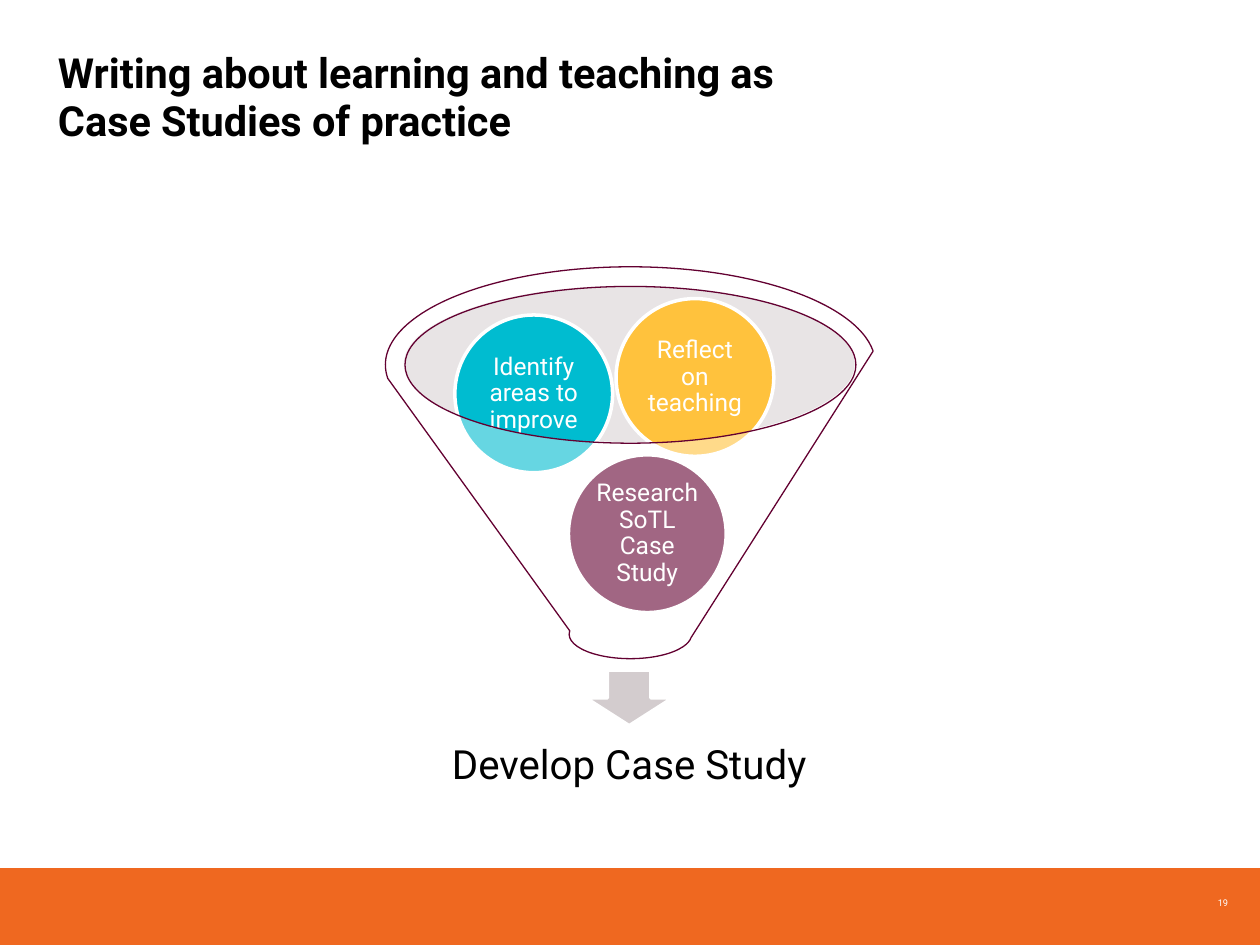
from lxml import etree
from pptx import Presentation
from pptx.dml.color import RGBColor
from pptx.enum.shapes import MSO_SHAPE
from pptx.enum.text import MSO_ANCHOR, PP_ALIGN
from pptx.oxml.ns import qn
from pptx.util import Cm, Pt

RECTANGLE, OVAL = MSO_SHAPE.RECTANGLE, MSO_SHAPE.OVAL
DOWN_ARROW, FUNNEL = MSO_SHAPE.DOWN_ARROW, MSO_SHAPE.FUNNEL
LEFT, CENTER = PP_ALIGN.LEFT, PP_ALIGN.CENTER
TOP, MIDDLE = MSO_ANCHOR.TOP, MSO_ANCHOR.MIDDLE
FONT = "Roboto"
WHITE, BLACK, PLUM = "FFFFFF", "000000", "630031"


def set_color(color_format, value):
    color_format.rgb = RGBColor.from_string(value)


def add_shape(page, kind, box, fill, line=None, width=0, opacity=None):
    shape = page.shapes.add_shape(kind, *map(Cm, box))
    shape.shadow.inherit = False
    shape.fill.solid()
    set_color(shape.fill.fore_color, fill)
    if opacity is not None:
        color = shape.fill._xPr.find(qn("a:solidFill"))[0]
        etree.SubElement(color, qn("a:alpha"), val=str(opacity * 1000))
    if line:
        set_color(shape.line.color, line)
        shape.line.width = Pt(width)
    else:
        shape.line.fill.background()
    return shape


def write_text(shape, text, size, color, bold=False, align=CENTER,
               anchor=MIDDLE, inset=(0, 0), spacing=None):
    frame = shape.text_frame
    frame.word_wrap = True
    frame.vertical_anchor = anchor
    frame.margin_left = frame.margin_right = Cm(inset[0])
    frame.margin_top = frame.margin_bottom = Cm(inset[1])
    para = frame.paragraphs[0]
    para.alignment = align
    if spacing:
        para.line_spacing = spacing
    span = para.add_run()
    span.text = text
    span.font.name = FONT
    span.font.size = Pt(size)
    span.font.bold = bold
    set_color(span.font.color, color)


def add_text(page, box, text, **style):
    write_text(page.shapes.add_textbox(*map(Cm, box)), text, **style)


def add_footer(page, left, top, width, height):
    add_shape(page, RECTANGLE, (left, top, width, height), "EF6820")
    # Slide number
    add_text(page, (left + width - 1.42, top - 0.08, 1.35, 1.57), "19",
             size=5.3, color=WHITE, inset=(0.36, 0.18))


def add_title(page, *box):
    add_text(page, box,
             "Writing about learning and teaching as Case Studies of practice",
             size=23.7, color=BLACK, bold=True, align=LEFT, anchor=TOP,
             spacing=Pt(27.4))


def add_funnel(page, left, top, width, height):
    # Funnel mouth
    add_shape(page, OVAL, (left + 0.37, top + 0.38, 9.09, 3.15),
              "C6BDBE", opacity=40)

    # Arrow and outcome below the spout
    middle = left + width / 2
    add_shape(page, DOWN_ARROW, (middle - 0.9, top + height + 0.23, 1.75, 1.12),
              "D3CCCE", WHITE, 2)
    add_text(page, (middle - 4.25, top + height + 1.12, 8.46, 2.11),
             "Develop Case Study", size=23, color=BLACK,
             inset=(0.46, 0.46), spacing=0.9)

    # Balls going into the funnel
    diameter = 3.18
    balls = [
        ("Research SoTL Case Study", 3.69, 3.79, PLUM),
        ("Identify areas to improve", 1.4, 0.97, "00BCD0"),
        ("Reflect on teaching", 4.65, 0.64, "FFC23D"),
    ]
    for text, across, down, fill in balls:
        ball = add_shape(page, OVAL,
                         (left + across, top + down, diameter, diameter),
                         fill, WHITE, 2)
        write_text(ball, text, size=14, color=WHITE, inset=(0.05, 0.05),
                   spacing=0.9)

    # Translucent funnel in front
    add_shape(page, FUNNEL, (left, top, width, height), WHITE, PLUM, 0.75,
              opacity=40)


def main():
    deck = Presentation()
    deck.slide_width, deck.slide_height = Cm(25.4), Cm(19.05)
    page = deck.slides.add_slide(deck.slide_layouts[6])
    add_footer(page, 0, 17.5, 25.4, 1.55)
    add_title(page, 1.17, 0.99, 15.4, 1.93)
    add_funnel(page, 7.77, 5.38, 9.88, 7.9)
    deck.save("out.pptx")


if __name__ == "__main__":
    main()
